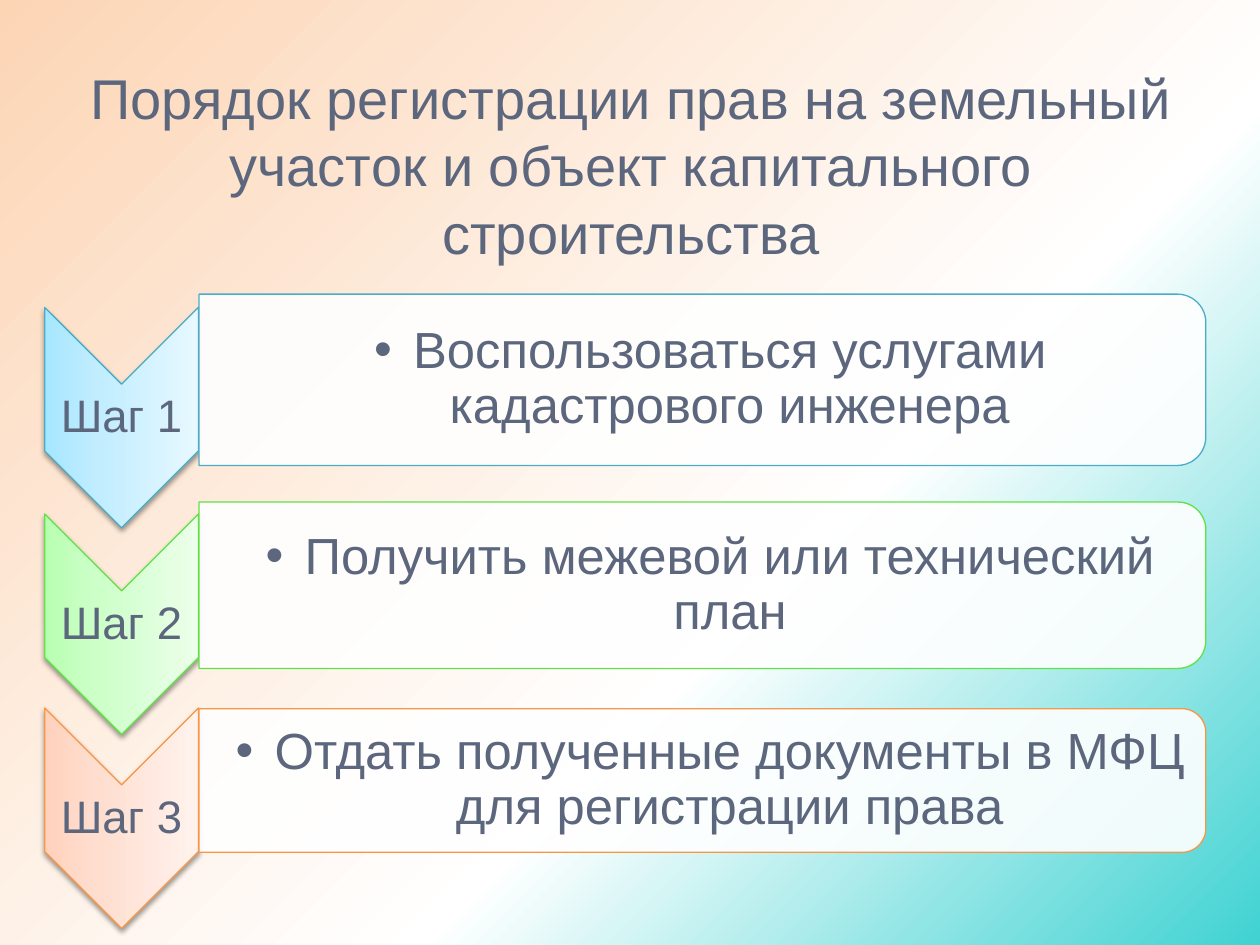
from lxml import etree
from pptx import Presentation, util as u
from pptx.dml.color import RGBColor
from pptx.enum import shapes, text
from pptx.oxml.ns import qn

INK = RGBColor(0x5C, 0x67, 0x7E)
WHITE = RGBColor(0xFF, 0xFF, 0xFF)
PEACH = RGBColor(0xFC, 0xD5, 0xB5)
TURQUOISE = RGBColor(0x40, 0xD2, 0xD2)
BLUES = [RGBColor.from_string(c) for c in ("4BACC6", "A7E6FF", "C1EDFF", "E7F8FF")]
GREENS = [RGBColor.from_string(c) for c in ("60E146", "B9FFB2", "CDFFC9", "ECFFEA")]
ORANGES = [RGBColor.from_string(c) for c in ("F79646", "FFD2BD", "FFDED0", "FFF2ED")]

# The slide is a grid of 100 columns by 100 rows.
COL, ROW = u.Inches(0.1), u.Inches(0.075)
ARROW_LEFT, ARROW_WIDTH, ARROW_HEIGHT = 3.55 * COL, 12.2 * COL, 23.33 * ROW
PANEL_LEFT, PANEL_WIDTH = 15.8 * COL, 79.9 * COL

# label, instruction, colours (line, then gradient), arrow top, panel top, panel height
STEPS = [
    ("Шаг 1", "Воспользоваться услугами кадастрового инженера", BLUES, 32.53, 31.13, 18.13),
    ("Шаг 2", "Получить межевой или технический план", GREENS, 54.4, 53.13, 17.6),
    ("Шаг 3", "Отдать полученные документы в МФЦ для регистрации права",
     ORANGES, 74.93, 75, 15.2),
]


def set_gradient(fill, owner, angle, stops):
    """Fill with (position, colour) stops; owner is the element holding the fill."""
    fill.gradient()
    fill.gradient_angle = angle
    stop_list = owner.find(".//" + qn("a:gsLst"))
    for old_stop in list(stop_list):
        stop_list.remove(old_stop)
    for position, colour in stops:
        stop = etree.SubElement(stop_list, qn("a:gs"), pos=str(position * 1000))
        etree.SubElement(stop, qn("a:srgbClr"), val=str(colour))


def add_turned(slide, preset, box, line_colour):
    """Add a preset turned by 90 degrees so that it covers the given box."""
    left, top, width, height = box
    shift = (width - height) / 2
    turned = slide.shapes.add_shape(
        preset, int(left + shift), int(top - shift), int(height), int(width))
    turned.rotation = 90
    turned.shadow.inherit = False
    turned.line.color.rgb = line_colour
    turned.line.width = u.Pt(0.75)
    return turned


def add_words(slide, box, words, size, left_inset=0.02):
    frame = slide.shapes.add_textbox(*(int(length) for length in box)).text_frame
    frame.word_wrap = True
    frame.vertical_anchor = text.MSO_ANCHOR.MIDDLE
    frame.margin_left = u.Inches(left_inset)
    frame.margin_top = frame.margin_right = frame.margin_bottom = u.Inches(0.02)
    paragraph = frame.paragraphs[0]
    paragraph.text = words
    paragraph.line_spacing = 0.9
    format_words(paragraph, size)
    return paragraph


def format_words(paragraph, size):
    paragraph.alignment = text.PP_ALIGN.CENTER
    font = paragraph.runs[0].font
    font.name, font.size, font.color.rgb = "Arial", u.Pt(size), INK


def add_arrow(slide, box, label, colours):
    left, top, width, height = box
    line_colour, *shades = colours
    arrow = add_turned(slide, shapes.MSO_SHAPE.CHEVRON, box, line_colour)
    set_gradient(arrow.fill, arrow.element, 90, zip((0, 35, 100), shades))
    shadow = etree.SubElement(
        arrow.element.find(".//" + qn("a:effectLst")), qn("a:outerShdw"),
        blurRad=str(u.Pt(3.1)), dist=str(u.Pt(1.6)), dir="5400000", rotWithShape="0")
    shade = etree.SubElement(shadow, qn("a:srgbClr"), val="000000")
    etree.SubElement(shade, qn("a:alpha"), val="38000")
    add_words(slide, (left, top + height * 0.35, width, height * 0.3), label, 26)


def add_panel(slide, box, instruction, line_colour):
    left, top, width, height = box
    panel = add_turned(slide, shapes.MSO_SHAPE.ROUND_2_SAME_RECTANGLE, box, line_colour)
    panel.fill.solid()
    panel.fill.fore_color.rgb = WHITE
    etree.SubElement(panel.element.find(".//" + qn("a:srgbClr")), qn("a:alpha"), val="90000")
    words_box = left, top + height * 0.05, width * 0.99, height * 0.9
    properties = add_words(slide, words_box, instruction, 29, 0.23)._p.get_or_add_pPr()
    properties.set("marL", str(u.Inches(0.31)))
    properties.set("indent", str(-u.Inches(0.31)))
    etree.SubElement(properties, qn("a:buFont"), typeface="Arial")
    etree.SubElement(properties, qn("a:buChar"), char="•")


def add_title(slide, box, words):
    title = slide.shapes.title
    title.left, title.top, title.width, title.height = (int(length) for length in box)
    frame = title.text_frame
    frame.text = words
    frame.auto_size = text.MSO_AUTO_SIZE.NONE
    frame.vertical_anchor = text.MSO_ANCHOR.MIDDLE
    format_words(frame.paragraphs[0], 32)


def main():
    deck = Presentation()
    deck.slide_width, deck.slide_height = 100 * COL, 100 * ROW
    slide = deck.slides.add_slide(deck.slide_layouts[5])
    set_gradient(slide.background.fill, slide.element, 315,
                 [(0, PEACH), (62, WHITE), (100, TURQUOISE)])
    add_title(slide, (5.1 * COL, 9.07 * ROW, 90 * COL, 16.67 * ROW),
              "Порядок регистрации прав на земельный участок "
              "и объект капитального строительства")
    for label, instruction, colours, arrow_top, panel_top, panel_height in STEPS:
        add_arrow(slide, (ARROW_LEFT, arrow_top * ROW, ARROW_WIDTH, ARROW_HEIGHT),
                  label, colours)
        add_panel(slide, (PANEL_LEFT, panel_top * ROW, PANEL_WIDTH, panel_height * ROW),
                  instruction, colours[0])
    deck.save("out.pptx")


if __name__ == "__main__":
    main()
